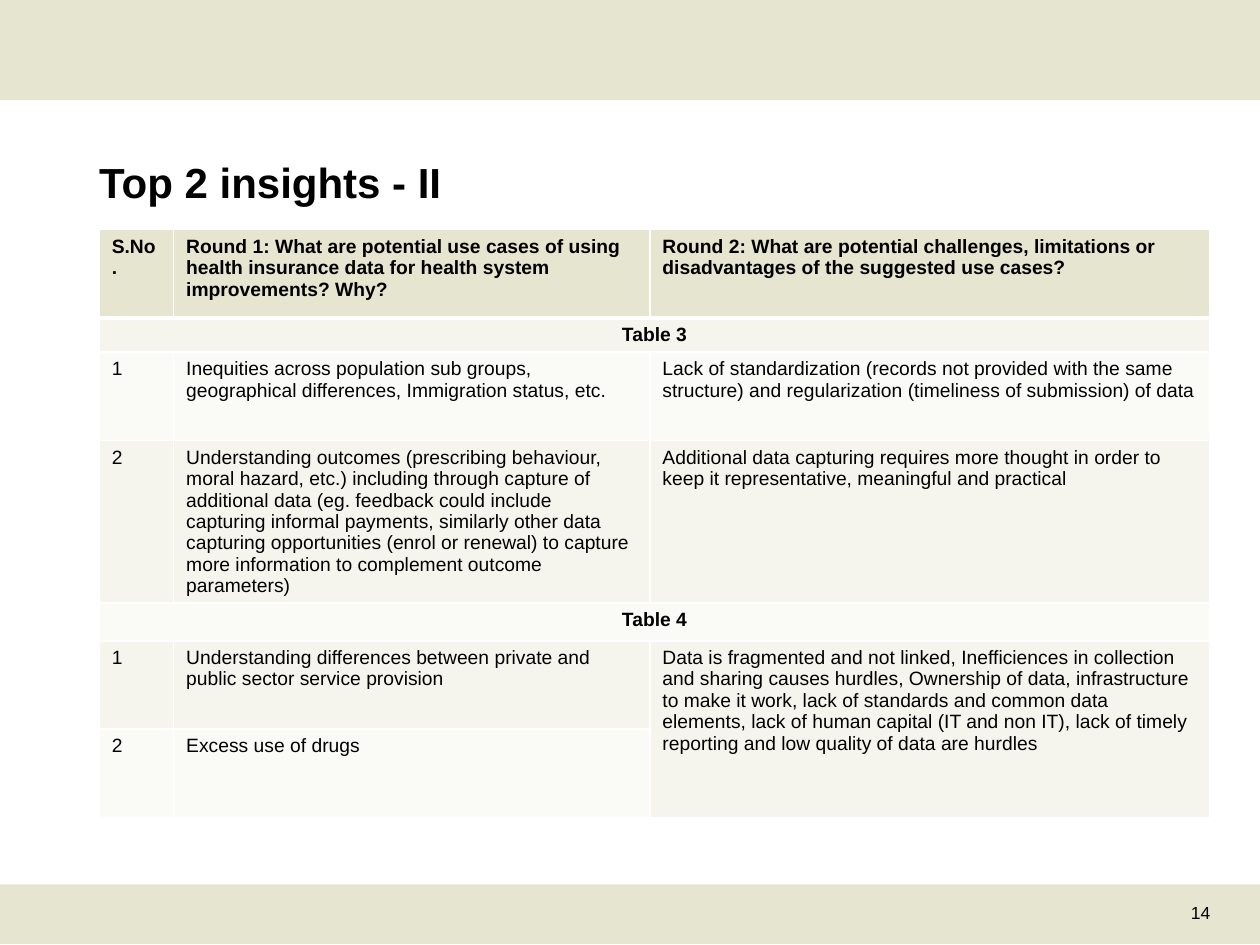
from pptx import Presentation
from pptx.dml.color import RGBColor
from pptx.enum.shapes import MSO_SHAPE
from pptx.enum.text import MSO_ANCHOR, PP_ALIGN
from pptx.oxml import parse_xml
from pptx.oxml.ns import nsdecls
from pptx.util import Cm, Pt

SAND = RGBColor(0xE5, 0xE5, 0xD0)
DARK_BAND = RGBColor(0xF5, 0xF5, 0xEE)
LIGHT_BAND = RGBColor(0xFA, 0xFA, 0xF7)
BLACK = RGBColor(0, 0, 0)
FONT = "Arial"

COLUMN_WIDTHS = [1.5, 9.6, 11.29]
ROW_HEIGHTS = [1.78, 0.69, 1.78, 2.85, 0.76, 1.78, 1.78]
# A row with one text is a heading across all columns;
# None continues the cell above.
ROWS = [
    ["S.No.",
     "Round 1: What are potential use cases of using health insurance data "
     "for health system improvements? Why?",
     "Round 2: What are potential challenges, limitations or disadvantages "
     "of the suggested use cases?"],
    ["Table 3"],
    ["1",
     "Inequities across population sub groups, geographical differences, "
     "Immigration status, etc.",
     "Lack of standardization (records not provided with the same structure) "
     "and regularization (timeliness of submission) of data"],
    ["2",
     "Understanding outcomes (prescribing behaviour, moral hazard, etc.) "
     "including through capture of additional data (eg. feedback could "
     "include capturing informal payments, similarly other data capturing "
     "opportunities (enrol or renewal) to capture more information to "
     "complement outcome parameters)",
     "Additional data capturing requires more thought in order to keep it "
     "representative, meaningful and practical"],
    ["Table 4"],
    ["1",
     "Understanding differences between private and public sector service "
     "provision",
     "Data is fragmented and not linked, Inefficiences in collection and "
     "sharing causes hurdles, Ownership of data, infrastructure to make it "
     "work, lack of standards and common data elements, lack of human "
     "capital (IT and non IT), lack of timely reporting and low quality of "
     "data are hurdles"],
    ["2", "Excess use of drugs", None],
]


def write_text(text_frame, text, size=11, bold=False, align=PP_ALIGN.LEFT):
    paragraph = text_frame.paragraphs[0]
    paragraph.alignment = align
    run = paragraph.add_run()
    run.text = text
    run.font.name = FONT
    run.font.size = Pt(size)
    run.font.bold = bold
    run.font.color.rgb = BLACK


def set_frame(text_frame, anchor, bottom=0):
    text_frame.word_wrap = True
    text_frame.vertical_anchor = anchor
    text_frame.margin_left = text_frame.margin_right = text_frame.margin_top = 0
    text_frame.margin_bottom = Cm(bottom)


def add_band(slide, left, top, width, height):
    band = slide.shapes.add_shape(MSO_SHAPE.RECTANGLE, Cm(left), Cm(top),
                                  Cm(width), Cm(height))
    band.shadow.inherit = False
    band.fill.solid()
    band.fill.fore_color.rgb = SAND
    band.line.fill.background()


def place_title(slide, left, top, width, height):
    title = slide.shapes.title
    title.left, title.top = Cm(left), Cm(top)
    title.width, title.height = Cm(width), Cm(height)
    set_frame(title.text_frame, MSO_ANCHOR.MIDDLE, bottom=0.13)
    write_text(title.text_frame, "Top 2 insights - II", size=24, bold=True)


def set_borders(cell, bottom_width):
    properties = cell._tc.get_or_add_tcPr()
    widths = {"lnL": 1, "lnR": 1, "lnT": 1, "lnB": bottom_width}
    # Borders come before the fill
    for position, (side, width) in enumerate(widths.items()):
        properties.insert(position, parse_xml(
            f'<a:{side} {nsdecls("a")} w="{Pt(width)}"><a:solidFill>'
            f'<a:srgbClr val="FFFFFF"/></a:solidFill></a:{side}>'))


def add_insights_table(slide, left, top):
    table = slide.shapes.add_table(
        len(ROWS), len(COLUMN_WIDTHS), Cm(left), Cm(top),
        Cm(sum(COLUMN_WIDTHS)), Cm(sum(ROW_HEIGHTS))).table
    for column, width in zip(table.columns, COLUMN_WIDTHS):
        column.width = Cm(width)

    for row_index, texts in enumerate(ROWS):
        table.rows[row_index].height = Cm(ROW_HEIGHTS[row_index])
        is_header = row_index == 0
        is_heading = len(texts) == 1
        band = DARK_BAND if row_index % 2 else LIGHT_BAND
        for cell in table.rows[row_index].cells:
            cell.fill.solid()
            cell.fill.fore_color.rgb = SAND if is_header else band
            set_borders(cell, bottom_width=3 if is_header else 1)
        if is_heading:
            table.cell(row_index, 0).merge(
                table.cell(row_index, len(COLUMN_WIDTHS) - 1))
        for column_index, text in enumerate(texts):
            cell = table.cell(row_index, column_index)
            if text is None:
                table.cell(row_index - 1, column_index).merge(cell)
                continue
            write_text(cell.text_frame, text, bold=is_header or is_heading,
                       align=PP_ALIGN.CENTER if is_heading else PP_ALIGN.LEFT)


def add_page_number(slide, left, top, width, height):
    box = slide.shapes.add_textbox(Cm(left), Cm(top), Cm(width), Cm(height))
    set_frame(box.text_frame, MSO_ANCHOR.TOP)
    write_text(box.text_frame, "14", size=10, align=PP_ALIGN.RIGHT)


def main():
    presentation = Presentation()
    presentation.slide_width, presentation.slide_height = Cm(25.4), Cm(19.05)
    slide = presentation.slides.add_slide(presentation.slide_layouts[5])

    # Bands at the foot and head of the page
    add_band(slide, 0, 17.83, 25.4, 1.2)
    add_band(slide, 0, 0, 25.4, 2.02)

    # Content
    place_title(slide, 2, 3.02, 22.4, 1.4)
    add_insights_table(slide, 2, 4.63)
    add_page_number(slide, 20.2, 18.18, 4.2, 0.64)

    presentation.save("out.pptx")


if __name__ == "__main__":
    main()
